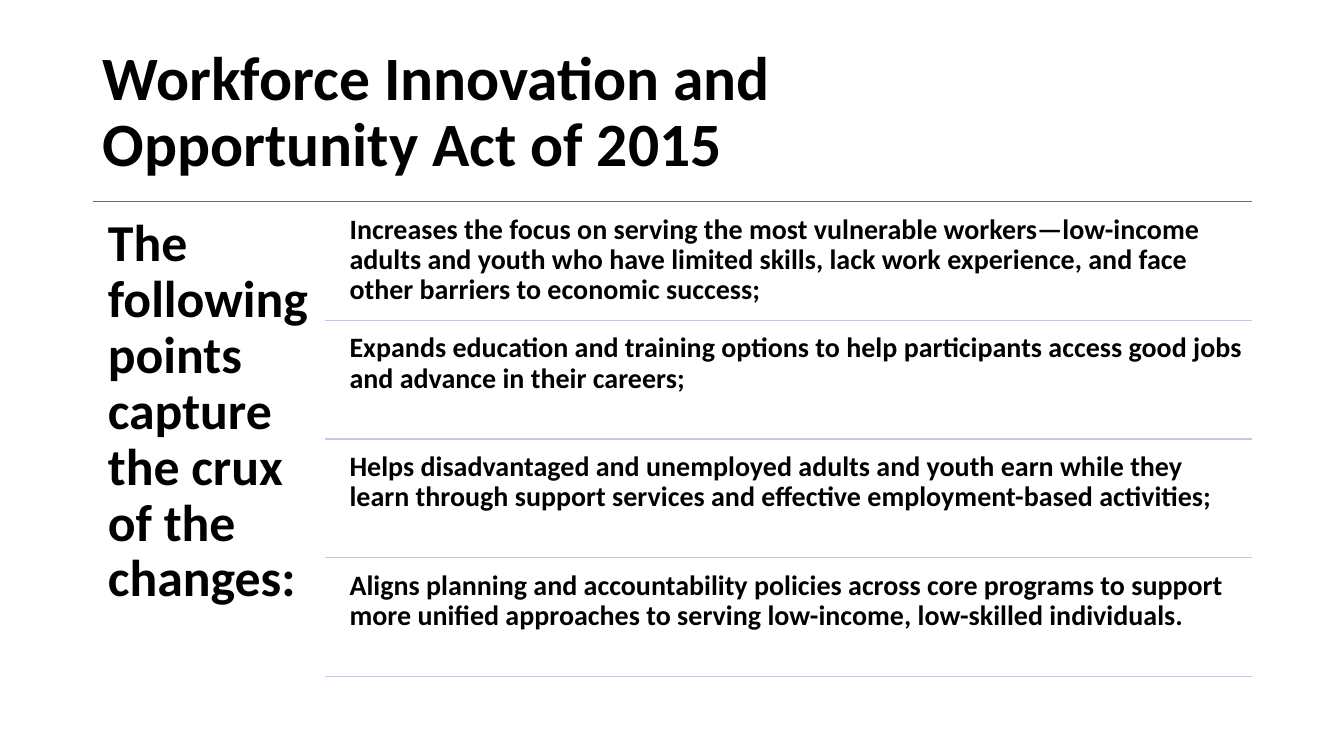
from lxml import etree
from pptx import Presentation
from pptx import util as u
from pptx.dml.color import RGBColor
from pptx.enum import shapes, text
from pptx.oxml.ns import qn

POINTS = [
    "Increases the focus on serving the most vulnerable workers—low-income adults and youth "
    "who have limited skills, lack work experience, and face other barriers to economic success;",
    "Expands education and training options to help participants access good jobs "
    "and advance in their careers;",
    "Helps disadvantaged and unemployed adults and youth earn while they learn "
    "through support services and effective employment-based activities;",
    "Aligns planning and accountability policies across core programs to support "
    "more unified approaches to serving low-income, low-skilled individuals.",
]
LEFT, RIGHT = 2.34, 31.55
TOP, PITCH = 5.08, 2.99
RULE_LEFT, POINT_LEFT = 8.18, 8.61


def write(sp, box, lines, size, inset, anchor=text.MSO_ANCHOR.TOP):
    sp.left, sp.top, sp.width, sp.height = [u.Cm(v) for v in box]
    tf = sp.text_frame
    tf.word_wrap = True
    tf.auto_size = text.MSO_AUTO_SIZE.NONE
    tf.vertical_anchor = anchor
    tf.margin_left = tf.margin_right = u.Cm(inset[0])
    tf.margin_top = tf.margin_bottom = u.Cm(inset[1])
    p = tf.paragraphs[0]
    p.alignment = text.PP_ALIGN.LEFT
    p.line_spacing = 0.9
    p.space_before = u.Pt(0)
    for i, line in enumerate(lines):
        if i:
            p.add_line_break()
        r = p.add_run()
        r.text = line
        r.font.name = "Calibri"
        r.font.size = u.Pt(size)
        r.font.bold = True
        r.font.color.rgb = RGBColor.from_string("000000")
    return p


def rule(left, top, color):
    line = s.shapes.add_connector(shapes.MSO_CONNECTOR.STRAIGHT,
                                  u.Cm(left), u.Cm(top), u.Cm(RIGHT), u.Cm(top))
    line.line.color.rgb = RGBColor.from_string(color)
    line.line.width = u.Pt(1)
    etree.SubElement(line._element.spPr, qn("a:effectLst"))


prs = Presentation()
prs.slide_width, prs.slide_height = u.Cm(33.87), u.Cm(19.05)
s = prs.slides.add_slide(prs.slide_layouts[1])

write(s.shapes.title, (LEFT, 1.02, RIGHT - LEFT, 3.68),
      ["Workforce Innovation and", "Opportunity Act of 2015"], 44, (0.25, 0.13),
      text.MSO_ANCHOR.MIDDLE)

rule(LEFT, TOP, "4472C4")
p = write(s.placeholders[1], (LEFT, TOP, 5.84, 12.09),
          ["The following points capture the crux of the changes:"], 37, (0.38, 0.38))
pPr = p._p.get_or_add_pPr()
pPr.set("marL", "0")
pPr.set("indent", "0")
etree.SubElement(pPr, qn("a:buNone"))

for i, point in enumerate(POINTS):
    top = TOP + i * PITCH
    sp = s.shapes.add_textbox(0, 0, 0, 0)
    write(sp, (POINT_LEFT, top + 0.14, RIGHT - POINT_LEFT, 2.84), [point], 20, (0.2, 0.2))
    rule(RULE_LEFT, top + PITCH, "C1C9E4")

prs.save("out.pptx")
